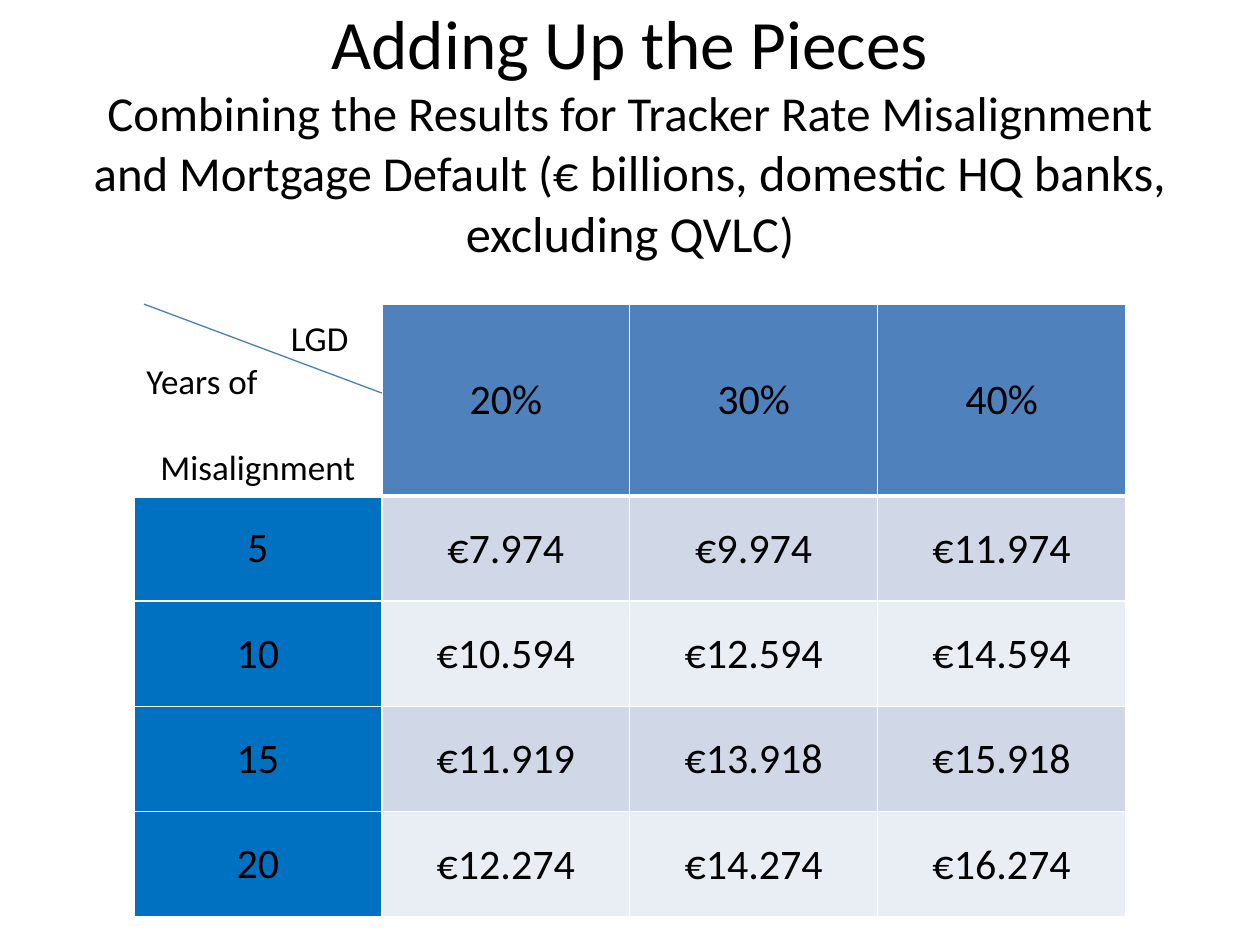
"""Build a slide that tabulates combined bank losses by LGD and years of misalignment."""
from dataclasses import dataclass

from lxml import etree
from pptx import Presentation
from pptx import util as u
from pptx.dml import color as c
from pptx.enum import shapes, text
from pptx.oxml import ns

FONT = "Calibri"
BLACK, WHITE = "000000", "FFFFFF"
HEADER_FILL, YEARS_FILL, DIAGONAL = "4F81BD", "0070C0", "4B7EBC"
BANDS = ("D0D8E8", "E9EDF4")
TABLE_LEFT, TABLE_TOP = 76.5, 173.8
COLUMN_WIDTH, HEADER_HEIGHT, ROW_HEIGHT = 141.7, 109.7, 60.1
THIN, THICK = 1, 3
CENTER, LEFT = text.PP_ALIGN.CENTER, text.PP_ALIGN.LEFT


@dataclass(frozen=True)
class Scenario:
    years: str
    losses: tuple[str, ...]


@dataclass(frozen=True)
class CornerLabel:
    wording: str
    align: text.PP_ALIGN
    indent: float = 0
    space_before: float = 0


LGD_RATES = ("20%", "30%", "40%")
SCENARIOS = (
    Scenario("5", ("€7.974", "€9.974", "€11.974")),
    Scenario("10", ("€10.594", "€12.594", "€14.594")),
    Scenario("15", ("€11.919", "€13.918", "€15.918")),
    Scenario("20", ("€12.274", "€14.274", "€16.274")),
)
CORNER_LABELS = (
    CornerLabel("LGD", LEFT, indent=82.5),
    CornerLabel("Years of", LEFT),
    CornerLabel("Misalignment", CENTER, space_before=24.4),
)
SUBTITLE_PARTS = (
    ("Combining the Results for Tracker Rate Misalignment and Mortgage Default (", 27.9),
    ("€ billions, domestic HQ banks, excluding QVLC", 28.8),
    (")", 27.9),
)


def rgb(value: str) -> c.RGBColor:
    return c.RGBColor.from_string(value)


def write(paragraph, wording: str, *, size: float = 24, color: str = BLACK,
          align: text.PP_ALIGN = CENTER, indent: float = 0, space_before: float = 0) -> None:
    paragraph.alignment = align
    paragraph.space_before = u.Pt(space_before)
    if indent:
        paragraph._p.get_or_add_pPr().set("marL", str(u.Pt(indent)))
    run = paragraph.add_run()
    run.text = wording
    run.font.name, run.font.size, run.font.bold = FONT, u.Pt(size), False
    run.font.color.rgb = rgb(color)


def style_cell(cell, fill: str, top: float = THIN, bottom: float = THIN) -> None:
    properties = cell._tc.get_or_add_tcPr()
    for side, width in (("L", THIN), ("R", THIN), ("T", top), ("B", bottom)):
        border = etree.SubElement(properties, ns.qn(f"a:ln{side}"), w=str(u.Pt(width)))
        solid = etree.SubElement(border, ns.qn("a:solidFill"))
        etree.SubElement(solid, ns.qn("a:srgbClr"), val=WHITE)
    cell.fill.solid()
    cell.fill.fore_color.rgb = rgb(fill)
    cell.vertical_anchor = text.MSO_ANCHOR.MIDDLE


def add_title(slide) -> None:
    frame = slide.shapes.add_textbox(u.Pt(36), u.Pt(21.6), u.Pt(648), u.Pt(106.6)).text_frame
    frame.word_wrap = True
    frame.auto_size = text.MSO_AUTO_SIZE.NONE
    frame.vertical_anchor = text.MSO_ANCHOR.MIDDLE
    heading = frame.paragraphs[0]
    write(heading, "Adding Up the Pieces", size=39.6)
    heading.add_line_break()
    for wording, size in SUBTITLE_PARTS:
        write(heading, wording, size=size)


def fill_corner(cell) -> None:
    style_cell(cell, WHITE, bottom=THICK)
    cell.vertical_anchor = text.MSO_ANCHOR.BOTTOM
    frame = cell.text_frame
    for index, label in enumerate(CORNER_LABELS):
        paragraph = frame.add_paragraph() if index else frame.paragraphs[0]
        write(paragraph, label.wording, size=20, align=label.align,
              indent=label.indent, space_before=label.space_before)


def add_loss_table(slide) -> None:
    rows, columns = len(SCENARIOS) + 1, len(LGD_RATES) + 1
    table = slide.shapes.add_table(
        rows, columns, u.Pt(TABLE_LEFT), u.Pt(TABLE_TOP), u.Pt(COLUMN_WIDTH * columns),
        u.Pt(HEADER_HEIGHT + ROW_HEIGHT * len(SCENARIOS))).table
    table.first_row = table.horz_banding = False
    for column in table.columns:
        column.width = u.Pt(COLUMN_WIDTH)
    for index, row in enumerate(table.rows):
        row.height = u.Pt(ROW_HEIGHT if index else HEADER_HEIGHT)

    fill_corner(table.cell(0, 0))
    for column, rate in enumerate(LGD_RATES, 1):
        header = table.cell(0, column)
        style_cell(header, HEADER_FILL, bottom=THICK)
        write(header.text_frame.paragraphs[0], rate)

    for row, scenario in enumerate(SCENARIOS, 1):
        top = THICK if row == 1 else THIN
        for column, wording in enumerate((scenario.years, *scenario.losses)):
            cell = table.cell(row, column)
            style_cell(cell, BANDS[(row - 1) % 2] if column else YEARS_FILL, top=top)
            if column:
                cell.margin_left = cell.margin_right = cell.margin_top = u.Pt(0.75)
                cell.margin_bottom = u.Pt(0)
            write(cell.text_frame.paragraphs[0], wording)


def add_corner_diagonal(slide) -> None:
    diagonal = slide.shapes.add_connector(
        shapes.MSO_CONNECTOR.STRAIGHT, u.Pt(82.3), u.Pt(TABLE_TOP),
        u.Pt(TABLE_LEFT + COLUMN_WIDTH), u.Pt(224.6))
    diagonal.line.color.rgb = rgb(DIAGONAL)
    diagonal.line.width = u.Pt(0.75)
    etree.SubElement(diagonal._element.spPr, ns.qn("a:effectLst"))


def main() -> None:
    deck = Presentation()
    deck.slide_width, deck.slide_height = u.Pt(720), u.Pt(540)
    slide = deck.slides.add_slide(deck.slide_layouts[6])
    add_title(slide)
    add_loss_table(slide)
    add_corner_diagonal(slide)
    deck.save("out.pptx")


if __name__ == "__main__":
    main()
